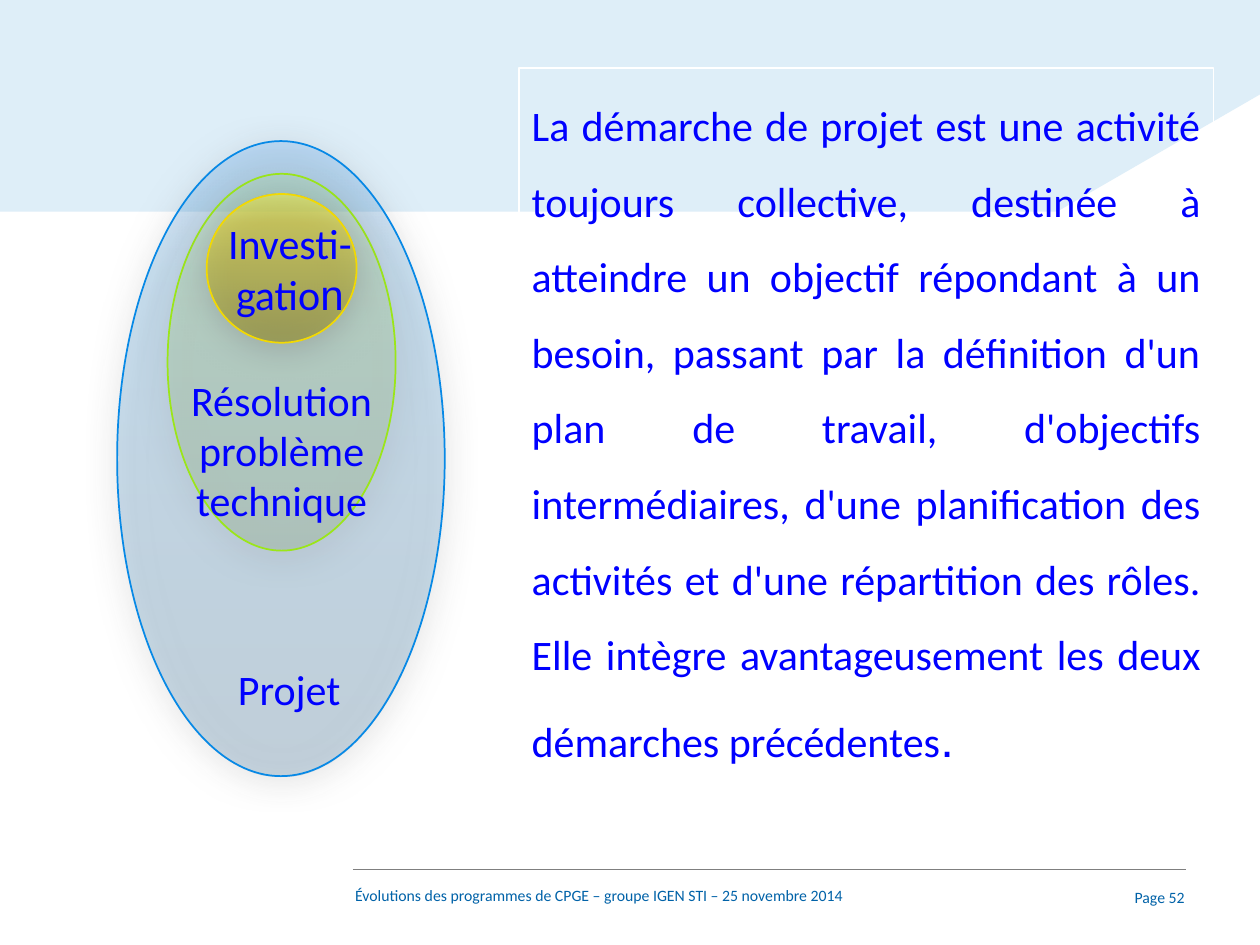
import dataclasses

import pptx
import pptx.dml.color
import pptx.enum.shapes
import pptx.enum.text
import pptx.oxml
import pptx.oxml.ns
import pptx.util

Inches = pptx.util.Inches
Align = pptx.enum.text.PP_ALIGN
Anchor = pptx.enum.text.MSO_ANCHOR


@dataclasses.dataclass(frozen=True)
class Theme:
    """Colours, fonts and type sizes of the slide."""
    banner: str = "DEEEF8"
    footer: str = "0062A8"
    rule: str = "7F7F7F"
    text: str = "0000FF"
    frame: str = "FFFFFF"
    shadow: str = "808080"
    font: str = "Calibri"
    accent_font: str = "Arial"
    small: int = 9
    body: int = 24
    large: int = 28


def rgb(value):
    """Return a colour object for a hexadecimal value."""
    return pptx.dml.color.RGBColor.from_string(value)


class SlideBuilder:
    """Holds the theme and the current slide, and draws each kind of element."""

    def __init__(self, theme, presentation):
        self.theme = theme
        self.slide = presentation.slides.add_slide(presentation.slide_layouts[1])
        title = self.slide.shapes.title
        title.element.getparent().remove(title.element)
        self.group = None

    def start_group(self):
        self.group = self.slide.shapes.add_group_shape()

    def banner(self, points):
        corners = [(Inches(x), Inches(y)) for x, y in points]
        builder = self.slide.shapes.build_freeform(*corners[0])
        builder.add_line_segments(corners[1:], close=True)
        shape = builder.convert_to_shape()
        shape.shadow.inherit = False
        shape.fill.solid()
        shape.fill.fore_color.rgb = rgb(self.theme.banner)
        shape.line.fill.background()

    def rule(self, left, right, top):
        connector = self.slide.shapes.add_connector(
            pptx.enum.shapes.MSO_CONNECTOR.STRAIGHT,
            Inches(left), Inches(top), Inches(right), Inches(top))
        connector.line.color.rgb = rgb(self.theme.rule)
        connector.line.width = pptx.util.Pt(0.5)
        properties = connector.element.spPr
        properties.append(pptx.oxml.parse_xml(
            f"<a:effectLst {pptx.oxml.ns.nsdecls('a')}/>"))

    def ellipse(self, box, line, colors, opacity):
        shape = self.group.shapes.add_shape(
            pptx.enum.shapes.MSO_SHAPE.OVAL, *map(Inches, box))
        shape.line.color.rgb = rgb(line)
        shape.line.width = pptx.util.Pt(1)
        shape.shadow.inherit = False
        namespace = pptx.oxml.ns.nsdecls("a")
        stops = "".join(
            f'<a:gs pos="{position * 1000}"><a:srgbClr val="{color}">'
            f'<a:alpha val="{opacity * 1000}"/></a:srgbClr></a:gs>'
            for position, color in zip((0, 20, 100), colors))
        properties = shape.element.spPr
        properties.find(pptx.oxml.ns.qn("a:prstGeom")).addnext(pptx.oxml.parse_xml(
            f'<a:gradFill {namespace} rotWithShape="1"><a:gsLst>{stops}</a:gsLst>'
            '<a:lin ang="5400000" scaled="0"/></a:gradFill>'))
        properties.find(pptx.oxml.ns.qn("a:effectLst")).append(pptx.oxml.parse_xml(
            f'<a:outerShdw {namespace} blurRad="{pptx.util.Pt(18)}" '
            f'dist="{pptx.util.Pt(3)}" dir="5400000" rotWithShape="0">'
            f'<a:srgbClr val="{self.theme.shadow}"><a:alpha val="80000"/>'
            '</a:srgbClr></a:outerShdw>'))

    def fill_paragraph(self, paragraph, runs, color, paragraph_format):
        for name, value in paragraph_format.items():
            setattr(paragraph, name, value)
        for text, font_name, size in runs:
            run = paragraph.add_run()
            run.text = text
            font_format = {"name": font_name, "size": pptx.util.Pt(size)}
            for name, value in font_format.items():
                setattr(run.font, name, value)
            run.font.color.rgb = rgb(color)

    def text(self, box, runs, color, alignment=Align.LEFT, anchor=Anchor.TOP, grouped=False):
        shapes = self.group.shapes if grouped else self.slide.shapes
        frame = shapes.add_textbox(*map(Inches, box)).text_frame
        for name, value in {"word_wrap": True, "vertical_anchor": anchor}.items():
            setattr(frame, name, value)
        self.fill_paragraph(frame.paragraphs[0], runs, color, {"alignment": alignment})

    def label(self, box, *runs):
        self.text(box, runs, self.theme.text, Align.CENTER, grouped=True)

    def footer(self, box, text, **layout):
        self.text(box, [(text, self.theme.font, self.theme.small)], self.theme.footer, **layout)

    def body(self, box, runs):
        shape = self.slide.placeholders[1]
        tree = shape.element.getparent()
        tree.append(shape.element)
        for name, value in zip(("left", "top", "width", "height"), box):
            setattr(shape, name, Inches(value))
        shape.line.color.rgb = rgb(self.theme.frame)
        shape.line.width = pptx.util.Pt(0.75)
        frame = shape.text_frame
        frame_format = {"word_wrap": True, "vertical_anchor": Anchor.TOP,
                        "auto_size": pptx.enum.text.MSO_AUTO_SIZE.NONE}
        for name, value in frame_format.items():
            setattr(frame, name, value)
        paragraph = frame.paragraphs[0]
        properties = paragraph._p.get_or_add_pPr()
        for name in ("marL", "indent"):
            properties.set(name, "0")
        properties.append(pptx.oxml.parse_xml(
            f"<a:buNone {pptx.oxml.ns.nsdecls('a')}/>"))
        self.fill_paragraph(paragraph, runs, self.theme.text, {
            "alignment": Align.JUSTIFY, "line_spacing": 1.5,
            "space_before": pptx.util.Pt(0)})


def main():
    """Build the slide and save it."""
    presentation = pptx.Presentation()
    presentation.slide_width = Inches(10)
    presentation.slide_height = Inches(7.5)
    theme = Theme()
    builder = SlideBuilder(theme, presentation)

    builder.banner([(10, 0), (0, 0), (0, 1.68), (8.39, 1.68), (10, 0.75)])
    builder.footer((2.72, 6.98, 5.91, 0.4),
                   "Évolutions des programmes de CPGE – groupe IGEN STI – 25 novembre 2014")
    builder.rule(2.8, 9.41, 6.9)
    builder.footer((8.62, 6.95, 0.88, 0.34), "Page 52",
                   alignment=Align.RIGHT, anchor=Anchor.MIDDLE)

    builder.start_group()
    builder.ellipse((0.93, 1.12, 2.6, 5.04), "0789E6", ("3799FF", "0C84DC", "044F86"), 18)
    builder.label((1.47, 5.22, 1.65, 0.51), ("Projet", theme.font, theme.body))
    builder.ellipse((1.33, 1.38, 1.81, 2.99), "9BE618", ("AEFF3B", "96DC1C", "5A860D"), 13)
    builder.label((1.41, 2.92, 1.65, 1.31),
                  ("Résolution problème technique", theme.font, theme.body))
    builder.ellipse((1.64, 1.54, 1.19, 1.18), "F2D902", ("FFF834", "E7CF07", "8D7E02"), 48)
    builder.label((1.59, 1.68, 1.42, 0.91),
                  ("Investi-gatio", theme.font, theme.body),
                  ("n", theme.accent_font, theme.body))

    builder.body((4.12, 0.54, 5.51, 5.96), [
        ("La démarche de projet est une activité toujours collective, destinée à "
         "atteindre un objectif répondant à un besoin, passant par la définition d'un "
         "plan de travail, d'objectifs intermédiaires, d'une planification des activités "
         "et d'une répartition des rôles. Elle intègre avantageusement les deux "
         "démarches précédentes", theme.font, theme.body),
        (".", theme.accent_font, theme.large)])

    presentation.save("out.pptx")


if __name__ == "__main__":
    main()
